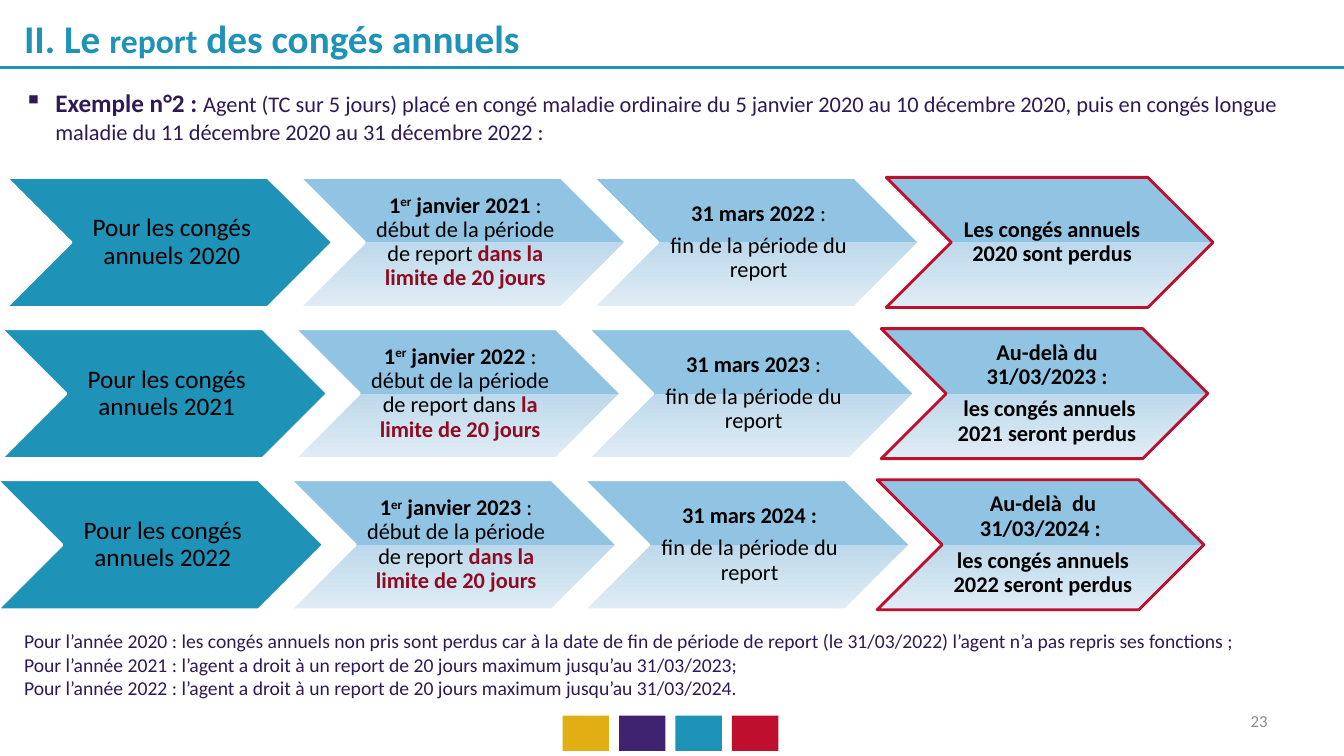
from copy import deepcopy

from lxml import etree
from pptx import Presentation
from pptx.dml.color import RGBColor
from pptx.enum.shapes import MSO_CONNECTOR, MSO_SHAPE
from pptx.enum.text import MSO_ANCHOR, PP_ALIGN
from pptx.oxml.ns import qn
from pptx.util import Inches, Pt

CHEVRON, RECT = MSO_SHAPE.CHEVRON, MSO_SHAPE.RECTANGLE
STRAIGHT = MSO_CONNECTOR.STRAIGHT
TOP, MIDDLE = MSO_ANCHOR.TOP, MSO_ANCHOR.MIDDLE
LEFT, CENTER, RIGHT = PP_ALIGN.LEFT, PP_ALIGN.CENTER, PP_ALIGN.RIGHT

W, H = 13.33, 7.5
FONT = "Calibri"
COLORS = {
    "teal": "1F92B7", "gold": "E1AE13", "purple": "3F2270", "red": "BE0F2E",
    "ink": "2F1A54", "black": "000000", "white": "FFFFFF", "wine": "8E0B22",
    "grey": "8C8C8C", "sky": "91C4E2", "pale": "BDD9EB", "mist": "DFECF5",
}
GRADIENT = [(0.5, "sky"), (0.5, "pale"), (1, "mist")]

# Chevron grid: size, then distance between columns and between rows
CHEVRON_W, CHEVRON_H = 3.24, 1.29
COL_STEP, ROW_STEP = 2.91, 1.5

# A run is (text, style); style letters: b bold, s superscript, w wine
FIN = ("fin de la période du report", "")
LIMIT = "limite de 20 jours"
ROWS = [
    (0.06, [
        [[("Pour les congés annuels 2020", "")]],
        [[("1", "b"), ("er", "bs"), (" janvier 2021 ", "b"),
          (": début de la période de report ", ""), ("dans la " + LIMIT, "bw")]],
        [[("31 mars 2022 ", "b"), (":", "")], [FIN]],
        [[("Les congés annuels 2020 sont perdus", "b")]],
    ]),
    (0.01, [
        [[("Pour les congés annuels 2021", "")]],
        [[("1", "b"), ("er", "bs"), (" janvier 2022 ", "b"),
          (": début de la période de report dans ", ""), ("la " + LIMIT, "bw")]],
        [[("31 mars 2023 ", "b"), (":", "")], [FIN]],
        [[("Au-delà du 31/03/2023 :", "b")],
         [(" les congés annuels 2021 seront perdus", "b")]],
    ]),
    (-0.03, [
        [[("Pour les congés annuels 2022", "")]],
        [[("1", "b"), ("er", "bs"), (" janvier 2023 ", "b"),
          (": début de la période de report ", ""), ("dans la " + LIMIT, "bw")]],
        [[("31 mars 2024 :", "b")], [FIN]],
        [[("Au-delà  du 31/03/2024 : ", "b")],
         [("les congés annuels 2022 seront perdus", "b")]],
    ]),
]
NOTES = [
    "Pour l’année 2020 : les congés annuels non pris sont perdus car à la date de fin de "
    "période de report (le 31/03/2022) l’agent n’a pas repris ses fonctions ;",
    "Pour l’année 2021 : l’agent a droit à un report de 20 jours maximum jusqu’au 31/03/2023;",
    "Pour l’année 2022 : l’agent a droit à un report de 20 jours maximum jusqu’au 31/03/2024.",
]


def rgb(name):
    return RGBColor.from_string(COLORS[name])


def add_run(p, text, size, color, bold=False):
    r = p.add_run()
    r.text = text
    r.font.name, r.font.size, r.font.bold = FONT, Pt(size), bold
    r.font.color.rgb = rgb(color)
    return r


def next_paragraph(tf, i, align=LEFT):
    p = tf.add_paragraph() if i else tf.paragraphs[0]
    p.alignment = align
    return p


def add_text(s, box, anchor=TOP):
    tf = s.shapes.add_textbox(*map(Inches, box)).text_frame
    tf.word_wrap, tf.vertical_anchor = True, anchor
    return tf


def add_shape(s, kind, box):
    sp = s.shapes.add_shape(kind, *map(Inches, box))
    sp.shadow.inherit = False
    return sp


def fill_gradient(sp):
    sp.fill.gradient()
    sp.fill.gradient_angle = 270
    stops = sp._element.spPr.find(qn("a:gradFill")).find(qn("a:gsLst"))
    stops.append(deepcopy(stops[-1]))
    for stop, (position, color) in zip(sp.fill.gradient_stops, GRADIENT):
        stop.position, stop.color.rgb = position, rgb(color)


def draw_title(s, box):
    x, y, w, h = box
    p = add_text(s, box).paragraphs[0]
    for text, size in [("II. Le ", 28), ("report", 24), (" des congés annuels", 28)]:
        add_run(p, text, size, "teal", True)
    # Rule under the title
    rule_y = Inches(y + h + 0.01)
    rule = s.shapes.add_connector(STRAIGHT, 0, rule_y, Inches(W), rule_y)
    rule.line.color.rgb, rule.line.width = rgb("teal"), Pt(1.5)
    etree.SubElement(rule._element.spPr, qn("a:effectLst"))


def draw_example(s, box):
    tf = add_text(s, box)
    tf.margin_top = Inches(0.1)
    p = tf.paragraphs[0]
    pPr = p._p.get_or_add_pPr()
    pPr.set("marL", str(Inches(0.31)))
    pPr.set("indent", str(-Inches(0.31)))
    etree.SubElement(pPr, qn("a:buChar")).set("char", "▪")
    add_run(p, "Exemple n°2 : ", 18, "ink", True)
    add_run(p, "Agent (TC sur 5 jours) placé en congé maladie ordinaire du 5 janvier 2020 "
            "au 10 décembre 2020, puis en congés longue maladie du 11 décembre 2020 "
            "au 31 décembre 2022 :", 16, "ink")


def draw_chevron(s, box, paragraphs, size, outline, solid):
    sp = add_shape(s, CHEVRON, box)
    if solid:
        sp.fill.solid()
        sp.fill.fore_color.rgb = rgb("teal")
    else:
        fill_gradient(sp)
    sp.line.color.rgb, sp.line.width = rgb(outline), Pt(2)
    tf = sp.text_frame
    tf.word_wrap, tf.vertical_anchor = True, MIDDLE
    tf.margin_left = Inches(0.07)
    tf.margin_right = tf.margin_top = tf.margin_bottom = Inches(0.02)
    for i, runs in enumerate(paragraphs):
        p = next_paragraph(tf, i, CENTER)
        p.line_spacing, p.space_after = 0.9, Pt(0.35 * size)
        for text, style in runs:
            r = add_run(p, text, size, "wine" if "w" in style else "black", "b" in style)
            if "s" in style:
                r.font._element.set("baseline", "30000")


def draw_timeline(s, top):
    for row, (left, cells) in enumerate(ROWS):
        for col, paragraphs in enumerate(cells):
            box = (left + col * COL_STEP, top + row * ROW_STEP, CHEVRON_W, CHEVRON_H)
            first, last = col == 0, col == len(cells) - 1
            draw_chevron(s, box, paragraphs, 18 if first else 16,
                         "red" if last else "white", first)


def draw_notes(s, box):
    tf = add_text(s, box)
    for i, note in enumerate(NOTES):
        add_run(next_paragraph(tf, i), note, 14, "ink")


def draw_footer(s, box):
    x, y, w, h = box
    # Colour squares
    for i, color in enumerate(["gold", "purple", "teal", "red"]):
        sp = add_shape(s, RECT, (x + i * 0.56, y, w, h))
        sp.fill.solid()
        sp.fill.fore_color.rgb = rgb(color)
        sp.line.fill.background()
    # Page number
    tf = add_text(s, (9.56, y - 0.15, 3.11, 0.4), MIDDLE)
    add_run(next_paragraph(tf, 0, RIGHT), "23", 12, "grey")


def main():
    prs = Presentation()
    prs.slide_width, prs.slide_height = Inches(W), Inches(H)
    s = prs.slides.add_slide(prs.slide_layouts[6])
    draw_title(s, (0.14, 0.09, 12.44, 0.57))
    draw_example(s, (0.14, 0.77, 12.92, 0.9))
    draw_timeline(s, 1.76)
    draw_notes(s, (0.14, 6.19, 13.02, 0.85))
    draw_footer(s, (5.58, 7.1, 0.46, 0.35))
    prs.save("out.pptx")


if __name__ == "__main__":
    main()
